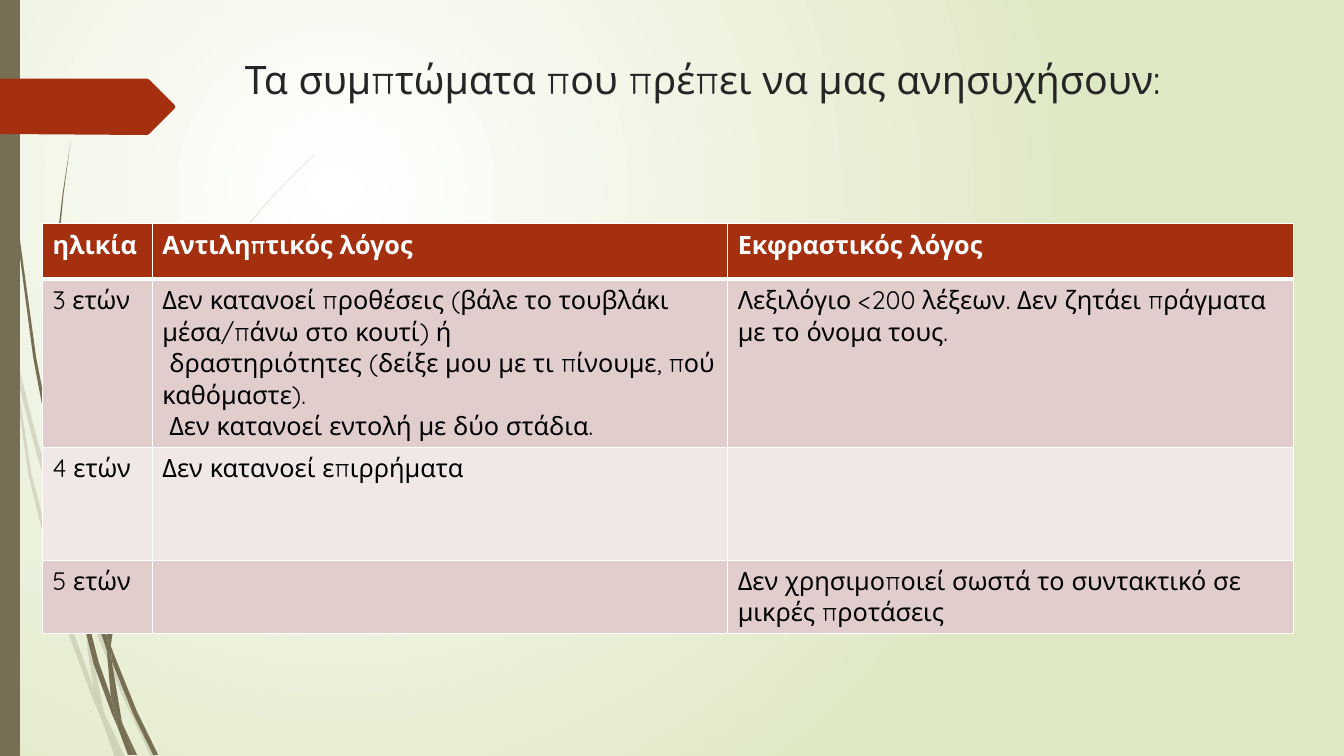
from dataclasses import dataclass

from lxml import etree
from pptx import Presentation
from pptx import util as u
from pptx.dml.color import RGBColor
from pptx.enum import text
from pptx.oxml.ns import qn


@dataclass(frozen=True)
class Theme:
    font: str = "Quicksand"
    title_size: int = 28
    table_size: int = 18
    accent: str = "A53010"
    stem: str = "766F54"
    title: str = "262626"
    ink: str = "000000"
    white: str = "FFFFFF"
    glow: str = "DFE8C4"
    bands: tuple = ("E1CDCC", "F0E8E7")


# Outlines as corner points, in hundredths of an inch
PALE_WISPS = [
    [(11, 350), (9, 322), (0, 282), (0, 299), (10, 344)],
    [(58, 522), (84, 599), (85, 586), (62, 520), (36, 433), (14, 345),
     (17, 376), (36, 449)],
    [(92, 607), (88, 596), (88, 610), (123, 694), (150, 751), (155, 751),
     (127, 692)],
    [(119, 751), (124, 751), (105, 711)],
    [(93, 683), (70, 619), (31, 469), (17, 376), (11, 350), (28, 470),
     (65, 621), (92, 693), (101, 714), (99, 707)],
    [(84, 599), (87, 646), (93, 683), (96, 692), (105, 711), (103, 706),
     (91, 646), (88, 610), (88, 608)],
    [(88, 584), (110, 462), (160, 349), (229, 245), (268, 198), (290, 175),
     (312, 154), (312, 153), (289, 175), (268, 197), (228, 244), (158, 348),
     (107, 461), (85, 584), (85, 586), (88, 596)],
    [(101, 714), (114, 751), (119, 751)],
    [(88, 608), (88, 596), (85, 586), (84, 599)],
    [(96, 692), (93, 683), (99, 707), (101, 714), (119, 751), (105, 711)],
]
DARK_WISPS = [
    [(7, 110), (17, 233), (33, 355), (56, 477), (57, 481), (55, 457),
     (55, 453), (36, 355), (19, 232), (8, 109), (5, 48), (4, 0), (3, 0),
     (4, 48)],
    [(88, 592), (106, 645), (106, 633), (106, 631), (93, 590), (75, 532),
     (60, 472), (64, 505), (75, 549)],
    [(113, 649), (110, 641), (111, 656), (132, 708), (152, 749), (157, 749),
     (136, 706)],
    [(110, 691), (98, 657), (72, 556), (64, 505), (57, 477), (68, 557),
     (93, 659), (111, 708), (117, 722), (116, 717)],
    [(60, 472), (58, 453), (54, 349), (58, 245), (63, 193), (70, 141),
     (62, 193), (56, 245), (52, 349), (55, 449)],
    [(133, 749), (136, 749), (122, 719)],
    [(57, 477), (64, 505), (60, 472), (55, 449), (55, 453)],
    [(111, 633), (125, 552), (158, 476), (205, 406), (231, 374), (245, 359),
     (261, 344), (260, 344), (245, 358), (231, 373), (204, 405), (156, 474),
     (122, 551), (106, 631), (110, 641)],
    [(117, 722), (127, 749), (131, 749)],
    [(106, 645), (110, 691), (116, 706), (122, 719), (121, 716), (111, 656),
     (109, 651)],
    [(106, 645), (109, 651), (111, 656), (110, 641), (106, 631), (106, 633)],
    [(116, 706), (110, 691), (116, 717), (117, 722), (130, 749), (133, 749),
     (122, 719)],
]
SIDE_BAR = [(0, 0), (20, 0), (20, 750), (0, 750)]
ARROW_TAB = [(0, 78), (146, 78), (148, 79), (173, 104), (174, 106), (173, 108),
             (148, 133), (146, 134), (0, 133)]

ROWS = [
    [["ηλικία"], ["Αντιληπτικός λόγος"], ["Εκφραστικός λόγος"]],
    [["3 ετών"],
     ["Δεν κατανοεί προθέσεις (βάλε το τουβλάκι μέσα/πάνω στο κουτί) ή",
      " δραστηριότητες (δείξε μου με τι πίνουμε, πού καθόμαστε).",
      " Δεν κατανοεί εντολή με δύο στάδια."],
     ["Λεξιλόγιο <200 λέξεων. Δεν ζητάει πράγματα με το όνομα τους."]],
    [["4 ετών"], ["Δεν κατανοεί επιρρήματα"], []],
    [["5 ετών"], [],
     ["Δεν χρησιμοποιεί σωστά το συντακτικό σε μικρές προτάσεις"]],
]
COLUMN_WIDTHS = [2.77, 14.5, 14.25]
ROW_HEIGHTS = [1.4, 1.04, 2.84, 1.04]


class Painter:
    def __init__(self, page, theme):
        self.page = page
        self.theme = theme

    def background(self):
        fill = self.page.background.fill
        fill.gradient()
        colours = (self.theme.white, self.theme.glow)
        for stop, colour, position in zip(fill.gradient_stops, colours, (0, 1)):
            stop.color.rgb = RGBColor.from_string(colour)
            stop.position = position
        gradient = next(self.page.element.iter(qn("a:gradFill")))
        gradient.remove(gradient.find(qn("a:lin")))
        circle = etree.SubElement(gradient, qn("a:path"), path="circle")
        etree.SubElement(circle, qn("a:fillToRect"),
                         l="50000", t="50000", r="100000", b="100000")

    def outline(self, shapes, points, colour, opacity=100):
        builder = shapes.build_freeform(*points[0], scale=u.Cm(0.0254))
        builder.add_line_segments(points[1:], close=True)
        shape = builder.convert_to_shape()
        shape.shadow.inherit = False
        shape.line.fill.background()
        shape.fill.solid()
        shape.fill.fore_color.rgb = RGBColor.from_string(colour)
        if opacity < 100:
            tint = next(shape.element.spPr.iter(qn("a:srgbClr")))
            etree.SubElement(tint, qn("a:alpha"), val=str(opacity * 1000))

    def wisps(self, outlines, opacity=100):
        group = self.page.shapes.add_group_shape()
        for points in outlines:
            self.outline(group.shapes, points, self.theme.stem, opacity)

    def add_span(self, para, words, size, colour, bold=False):
        span = para.add_run()
        span.text = words
        span.font.name = self.theme.font
        span.font.size = u.Pt(size)
        span.font.bold = bold
        span.font.color.rgb = RGBColor.from_string(colour)

    def title(self, words, left, top, width, height):
        box = self.page.shapes.title
        box.left, box.top = u.Cm(left), u.Cm(top)
        box.width, box.height = u.Cm(width), u.Cm(height)
        frame = box.text_frame
        frame.word_wrap = True
        frame.auto_size = text.MSO_AUTO_SIZE.NONE
        frame.vertical_anchor = text.MSO_ANCHOR.TOP
        para = frame.paragraphs[0]
        para.alignment = text.PP_ALIGN.LEFT
        self.add_span(para, words, self.theme.title_size, self.theme.title)

    def borders(self, cell, **widths):
        properties = cell._tc.get_or_add_tcPr()
        for side in "LRTB":
            line = etree.SubElement(properties, qn(f"a:ln{side}"),
                                    w=str(u.Pt(widths.get(side, 1))))
            solid = etree.SubElement(line, qn("a:solidFill"))
            etree.SubElement(solid, qn("a:srgbClr"), val=self.theme.white)

    def table(self, rows, left, top, widths, heights):
        table = self.page.shapes.add_table(
            len(rows), len(widths), u.Cm(left), u.Cm(top),
            u.Cm(sum(widths)), u.Cm(sum(heights))).table
        for column, width in zip(table.columns, widths):
            column.width = u.Cm(width)
        for number, (row, height) in enumerate(zip(rows, heights)):
            table.rows[number].height = u.Cm(height)
            header = number == 0
            band = self.theme.accent if header else self.theme.bands[(number - 1) % 2]
            ink = self.theme.white if header else self.theme.ink
            for cell, lines in zip(table.rows[number].cells, row):
                self.borders(cell, B=3 if header else 1, T=3 if number == 1 else 1)
                cell.fill.solid()
                cell.fill.fore_color.rgb = RGBColor.from_string(band)
                frame = cell.text_frame
                for index, words in enumerate(lines):
                    para = frame.add_paragraph() if index else frame.paragraphs[0]
                    self.add_span(para, words, self.theme.table_size, ink, header)


def main():
    deck = Presentation()
    deck.slide_width, deck.slide_height = u.Cm(33.87), u.Cm(19.05)
    theme = Theme()
    page = deck.slides.add_slide(deck.slide_layouts[5])
    painter = Painter(page, theme)

    # Backdrop
    painter.background()
    painter.wisps(PALE_WISPS, opacity=20)
    painter.wisps(DARK_WISPS)
    painter.outline(page.shapes, SIDE_BAR, theme.stem)
    painter.outline(page.shapes, ARROW_TAB, theme.accent)

    # Content
    painter.title("Τα συμπτώματα που πρέπει να μας ανησυχήσουν:", 5.92, 1.27, 29.21, 3.68)
    painter.table(ROWS, 1.07, 5.64, COLUMN_WIDTHS, ROW_HEIGHTS)

    deck.save("out.pptx")


if __name__ == "__main__":
    main()
